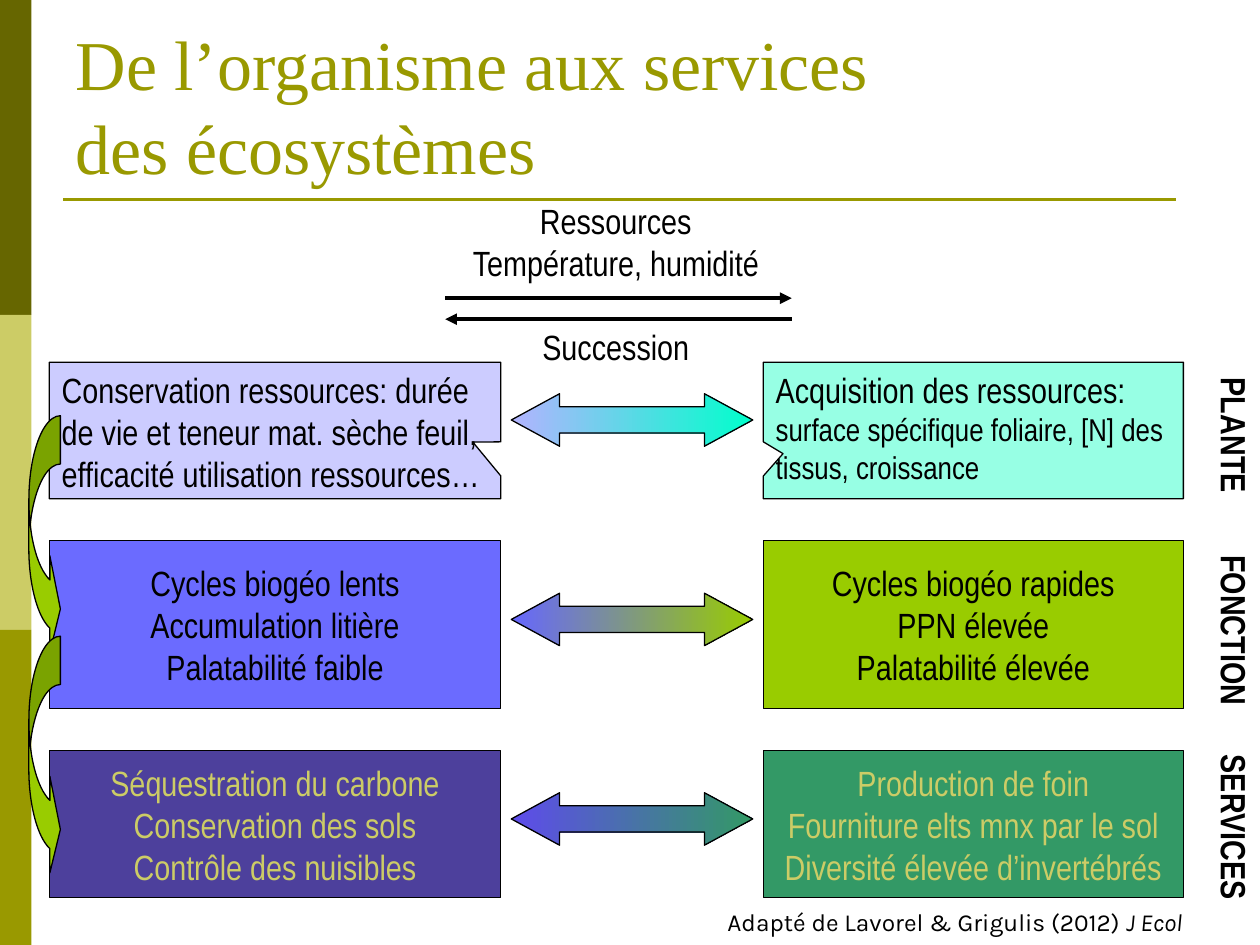
from lxml import etree
from pptx import Presentation
from pptx.dml.color import RGBColor
from pptx.enum.shapes import MSO_CONNECTOR, MSO_SHAPE
from pptx.enum.text import MSO_ANCHOR, MSO_AUTO_SIZE, PP_ALIGN
from pptx.oxml.ns import qn
from pptx.util import Inches, Pt

RECTANGLE = MSO_SHAPE.RECTANGLE
CALLOUT = MSO_SHAPE.RECTANGULAR_CALLOUT
DOUBLE_ARROW = MSO_SHAPE.LEFT_RIGHT_ARROW
CURVED_ARROW = MSO_SHAPE.CURVED_RIGHT_ARROW
STRAIGHT = MSO_CONNECTOR.STRAIGHT
LEFT, CENTER = PP_ALIGN.LEFT, PP_ALIGN.CENTER
TOP, MIDDLE, BOTTOM = MSO_ANCHOR.TOP, MSO_ANCHOR.MIDDLE, MSO_ANCHOR.BOTTOM
FIT_SHAPE = MSO_AUTO_SIZE.SHAPE_TO_FIT_TEXT

BLACK = RGBColor(0x00, 0x00, 0x00)
DARK_OLIVE = RGBColor(0x66, 0x66, 0x00)
OLIVE = RGBColor(0x99, 0x99, 0x00)
SAND = RGBColor(0xCC, 0xCC, 0x66)
LAVENDER = RGBColor(0xCC, 0xCC, 0xFF)
AQUA = RGBColor(0x97, 0xFF, 0xE4)
BLUE = RGBColor(0x6B, 0x6B, 0xFF)
LIME = RGBColor(0x99, 0xCC, 0x00)
INDIGO = RGBColor(0x4D, 0x40, 0x9C)
GREEN = RGBColor(0x33, 0x99, 0x66)
PALE_BLUE = RGBColor(0xB3, 0xB3, 0xFF)
TURQUOISE = RGBColor(0x00, 0xFF, 0xCC)
CORNFLOWER = RGBColor(0x66, 0x66, 0xFF)
VIOLET = RGBColor(0x5E, 0x4B, 0xEB)

WIDTH, HEIGHT = 10, 7.5
COLUMNS, ROWS = 120, 90
BOX_LEFT, BOX_WIDTH = (4.7, 72.7), (43, 40)
LEVEL_TOPS, LEVEL_HEIGHTS = (34.5, 51.5, 71.5), (13, 16, 14)
ARROW_TOP, ARROW_STEP = 37.5, 19


class SlideBuilder:
    def __init__(self, presentation):
        self.font_name = "Arial Narrow"
        self.font_size = 20
        self.slide = presentation.slides.add_slide(presentation.slide_layouts[5])

    def grid(self, *lengths):
        units = (WIDTH / COLUMNS, HEIGHT / ROWS)
        return [Inches(length * units[index % 2]) for index, length in enumerate(lengths)]

    def set_text(self, shape, lines, color=BLACK, align=CENTER, anchor=TOP,
                 wrap=False, name=None, size=None, bold=False):
        frame = shape.text_frame
        frame.text = "\n".join(lines)
        frame.word_wrap = wrap
        frame.vertical_anchor = anchor
        for paragraph in frame.paragraphs:
            paragraph.alignment = align
            paragraph.font.name = name or self.font_name
            paragraph.font.size = Pt(size or self.font_size)
            paragraph.font.color.rgb = color
            paragraph.font.bold = bold
        return frame.paragraphs

    def title(self, text, box):
        shape = self.slide.shapes.title
        shape.left, shape.top, shape.width, shape.height = self.grid(*box)
        self.set_text(shape, [text], OLIVE, LEFT, BOTTOM, True, "Times New Roman", 40)

    def shape(self, kind, box, fill, outlined=True, adjustments=()):
        shape = self.slide.shapes.add_shape(kind, *self.grid(*box))
        shape.shadow.inherit = False
        for index, value in enumerate(adjustments):
            shape.adjustments[index] = value
        if isinstance(fill, RGBColor):
            shape.fill.solid()
            shape.fill.fore_color.rgb = fill
        else:
            shape.fill.gradient()
            shape.fill.gradient_angle = 0
            for stop, color in zip(shape.fill.gradient_stops, fill):
                stop.color.rgb = color
        if outlined:
            shape.line.color.rgb = BLACK
            shape.line.width = Pt(0.75)
        else:
            shape.line.fill.background()
        return shape

    def text(self, box, lines, **style):
        shape = self.slide.shapes.add_textbox(*self.grid(*box))
        paragraphs = self.set_text(shape, lines, **style)
        shape.text_frame.auto_size = FIT_SHAPE
        return shape, paragraphs

    def vertical_label(self, box, text):
        shape, _ = self.text(box, [text], align=LEFT, bold=True)
        shape.element.txBody.bodyPr.set("vert", "eaVert")

    def line(self, ends, color, width, arrow=None):
        connector = self.slide.shapes.add_connector(STRAIGHT, *self.grid(*ends))
        connector.line.color.rgb = color
        connector.line.width = Pt(width)
        properties = connector.element.spPr
        if arrow:
            etree.SubElement(properties.find(qn("a:ln")), qn(arrow), type="triangle")
        etree.SubElement(properties, qn("a:effectLst"))


def main():
    presentation = Presentation()
    presentation.slide_width = Inches(WIDTH)
    presentation.slide_height = Inches(HEIGHT)
    builder = SlideBuilder(presentation)

    for index, color in enumerate((DARK_OLIVE, SAND, OLIVE)):
        builder.shape(RECTANGLE, (0, 30 * index, 3, 30), color, outlined=False)
    builder.line((6, 19, 112, 19), OLIVE, 1.5)
    builder.title("De l’organisme aux services\vdes écosystèmes", (6, 3.6, 108, 15))

    callouts = (
        (LAVENDER, (0.438, 0.085),
         "Conservation ressources: durée de vie et teneur mat. sèche feuil, "
         "efficacité utilisation ressources…", ""),
        (AQUA, (-0.453, 0.17), "Acquisition des ressources: ",
         "surface spécifique foliaire, [N] des tissus, croissance"),
    )
    for left, width, (fill, pointer, lead, detail) in zip(BOX_LEFT, BOX_WIDTH, callouts):
        box = (left, LEVEL_TOPS[0], width, LEVEL_HEIGHTS[0])
        callout = builder.shape(CALLOUT, box, fill, adjustments=pointer)
        paragraph = builder.set_text(callout, [lead], align=LEFT, wrap=True)[0]
        if detail:
            run = paragraph.add_run()
            run.text = detail
            run.font.size = Pt(18)

    levels = (
        (BLACK,
         (BLUE, ("Cycles biogéo lents", "Accumulation litière", "Palatabilité faible")),
         (LIME, ("Cycles biogéo rapides", "PPN élevée", "Palatabilité élevée"))),
        (SAND,
         (INDIGO, ("Séquestration du carbone", "Conservation des sols",
                   "Contrôle des nuisibles")),
         (GREEN, ("Production de foin", "Fourniture elts mnx par le sol",
                  "Diversité élevée d’invertébrés"))),
    )
    for top, height, (color, *sides) in zip(LEVEL_TOPS[1:], LEVEL_HEIGHTS[1:], levels):
        for left, width, (fill, lines) in zip(BOX_LEFT, BOX_WIDTH, sides):
            shape = builder.shape(RECTANGLE, (left, top, width, height), fill)
            builder.set_text(shape, lines, color, anchor=MIDDLE)

    for top in (39.6, 60.6):
        builder.shape(CURVED_ARROW, (2.75, top, 3, 23), LIME,
                      adjustments=(1.533, 3.067, 0.333))

    gradients = ([PALE_BLUE, TURQUOISE], [CORNFLOWER, LIME], [VIOLET, GREEN])
    for index, colors in enumerate(gradients):
        builder.shape(DOUBLE_ARROW, (48.7, ARROW_TOP + ARROW_STEP * index, 23, 5),
                      colors, adjustments=(0.5, 0.92))

    labels = (("PLANTE", 34.8, 12.1), ("FONCTION", 51.7, 15.5), ("SERVICES", 70.7, 15.1))
    for label, top, height in labels:
        builder.vertical_label((113.8, top, 6.4, height), label)

    _, driver_lines = builder.text(
        (43.7, 18.4, 29.9, 17.2), ("Ressources", "Température, humidité", "Succession"))
    driver_lines[-1].space_before = Pt(24)
    for row, arrow in ((28.4, "a:tailEnd"), (30.4, "a:headEnd")):
        builder.line((42.4, row, 75.4, row), BLACK, 2.25, arrow)

    _, (citation,) = builder.text(
        (67.7, 85.8, 47, 4.1), ["Adapté de Lavorel & Grigulis (2012) "],
        name="Karla", size=14)
    journal = citation.add_run()
    journal.text = "J Ecol "
    journal.font.italic = True

    presentation.save("out.pptx")


if __name__ == "__main__":
    main()
